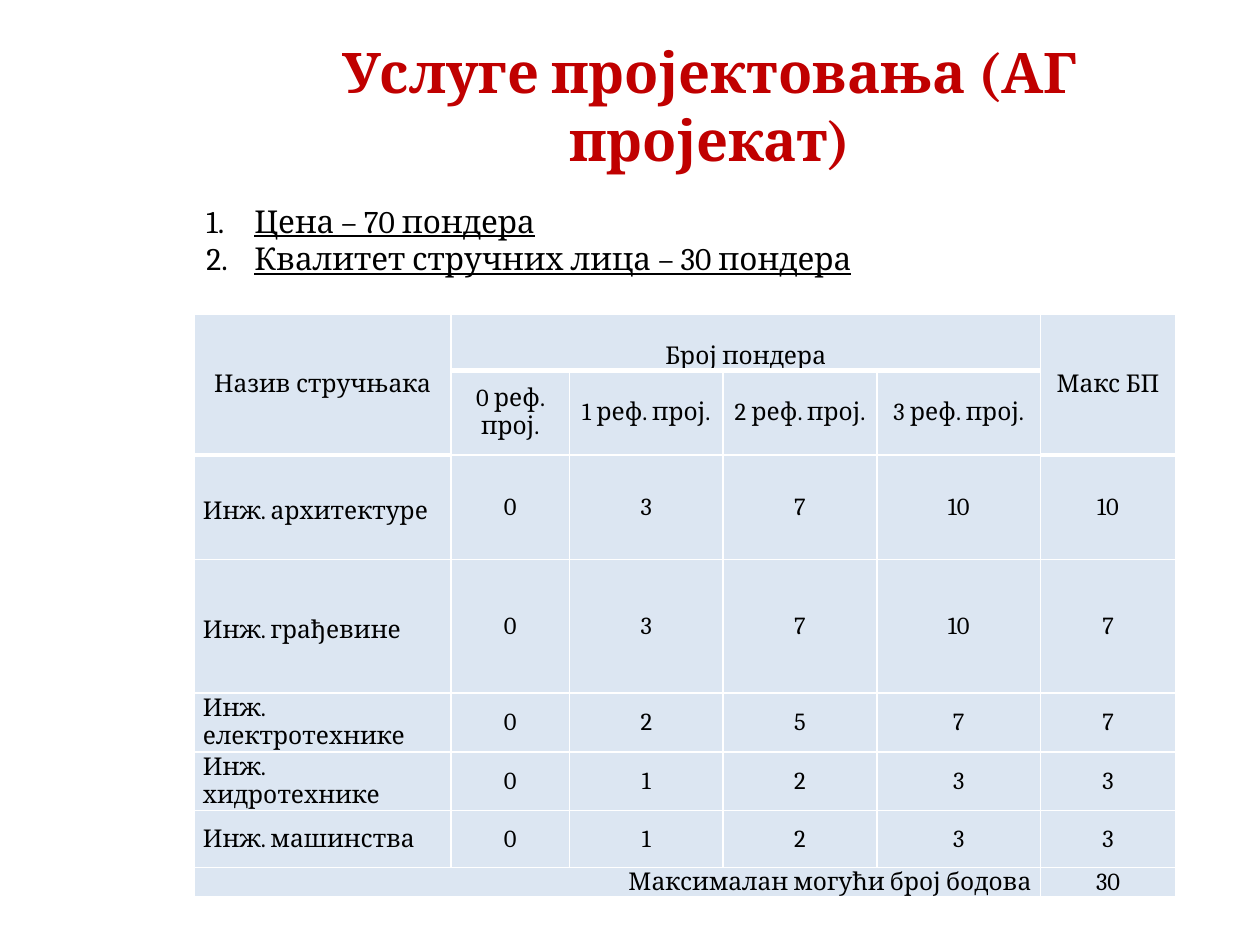
"""Build a slide with the scoring table for design services."""
from lxml import etree
from pptx import Presentation
from pptx import util as u
from pptx.dml.color import RGBColor
from pptx.enum import text
from pptx.oxml import ns

ALIGN = text.PP_ALIGN
ANCHOR = text.MSO_ANCHOR


def write(paragraph, content, color="000000", **formats):
    run = paragraph.add_run()
    run.text = content
    run.font.color.rgb = RGBColor.from_string(color)
    for name, value in {"name": "Cambria", **formats}.items():
        setattr(run.font, name, value)


def add_border(cell, side, points):
    properties = cell._tc.get_or_add_tcPr()
    line = etree.SubElement(properties, ns.qn("a:ln" + side), w=str(u.Pt(points)))
    fill = etree.SubElement(line, ns.qn("a:solidFill"))
    etree.SubElement(fill, ns.qn("a:srgbClr"), val="FFFFFF")


presentation = Presentation()
presentation.slide_width = u.Inches(10)
presentation.slide_height = u.Inches(7.5)
slide = presentation.slides.add_slide(presentation.slide_layouts[6])

title = slide.shapes.add_textbox(u.Inches(1.77), u.Inches(0.42), u.Inches(7.73), u.Inches(0.83))
title.text_frame.word_wrap = True
title.text_frame.vertical_anchor = ANCHOR.MIDDLE
paragraph = title.text_frame.paragraphs[0]
paragraph.alignment = ALIGN.CENTER
write(paragraph, "Услуге пројектовања (АГ пројекат)", "C00000", size=u.Pt(32), bold=True)

rows = [
    ["Назив стручњака", "Број пондера", "", "", "", "Макс БП"],
    ["", "0 реф. прој.", "1 реф. прој.", "2 реф. прој.", "3 реф. прој.", ""],
    ["Инж. архитектуре", "0", "3", "7", "10", "10"],
    ["Инж. грађевине", "0", "3", "7", "10", "7"],
    ["Инж. електротехнике", "0", "2", "5", "7", "7"],
    ["Инж. хидротехнике", "0", "1", "2", "3", "3"],
    ["Инж. машинства", "0", "1", "2", "3", "3"],
    ["Максималан могући број бодова", "", "", "", "", "30"],
]
widths = [2.04, 0.94, 1.22, 1.22, 1.3, 1.07]
heights = [0.45, 0.67, 0.83, 1.06, 0.45, 0.45, 0.45, 0.22]
last_row, last_column = len(rows) - 1, len(widths) - 1

table = slide.shapes.add_table(
    len(rows), len(widths), u.Inches(1.54), u.Inches(2.49),
    u.Inches(sum(widths)), u.Inches(sum(heights))).table
table.first_row = table.horz_banding = False
for column, width in zip(table.columns, widths):
    column.width = u.Inches(width)
for row, height in zip(table.rows, heights):
    row.height = u.Inches(height)

for r, values in enumerate(rows):
    for c, value in enumerate(values):
        cell = table.cell(r, c)
        outer = c in (0, last_column)
        thick_edges = (1, 2) if outer else (1,)
        borders = {"L": 1, "R": 1,
                   "T": 3 if r in thick_edges else 1,
                   "B": 3 if r + 1 in thick_edges else 1}
        for side, points in borders.items():
            add_border(cell, side, points)
        cell.fill.solid()
        cell.fill.fore_color.rgb = RGBColor.from_string("DCE6F2")
        tall_name = c == 0 and r in (2, 3)
        formats = {
            "margin_left": u.Inches(0.07), "margin_right": u.Inches(0.07),
            "margin_top": u.Inches(0.07 if tall_name else 0), "margin_bottom": 0,
            "vertical_anchor": ANCHOR.BOTTOM if (r, c) == (0, 1) else ANCHOR.MIDDLE,
        }
        for name, setting in formats.items():
            setattr(cell, name, setting)
        paragraph = cell.text_frame.paragraphs[0]
        paragraph.alignment = ALIGN.CENTER
        if c == 0 and r == last_row:
            paragraph.alignment = ALIGN.RIGHT
        elif c == 0 and r > 1:
            paragraph.alignment = ALIGN.LEFT
            paragraph.space_before = u.Pt(6)
        if value:
            write(paragraph, value, size=u.Pt(14))
        else:
            paragraph.font.size = u.Pt(14)

for start, end in [((0, 0), (1, 0)), ((0, 1), (0, 4)),
                   ((0, last_column), (1, last_column)),
                   ((last_row, 0), (last_row, 4))]:
    table.cell(*start).merge(table.cell(*end))

criteria = slide.shapes.add_textbox(u.Inches(1.54), u.Inches(1.55), u.Inches(7.72), u.Inches(0.71))
frame = criteria.text_frame
frame.word_wrap = True
for index, criterion in enumerate(["Цена – 70 пондера", "Квалитет стручних лица – 30 пондера"]):
    paragraph = frame.add_paragraph() if index else frame.paragraphs[0]
    properties = paragraph._p.get_or_add_pPr()
    properties.set("marL", str(u.Inches(0.38)))
    properties.set("indent", str(u.Inches(-0.38)))
    etree.SubElement(properties, ns.qn("a:buAutoNum"), type="arabicPeriod")
    write(paragraph, criterion, size=u.Pt(18), underline=True)

presentation.save("out.pptx")
